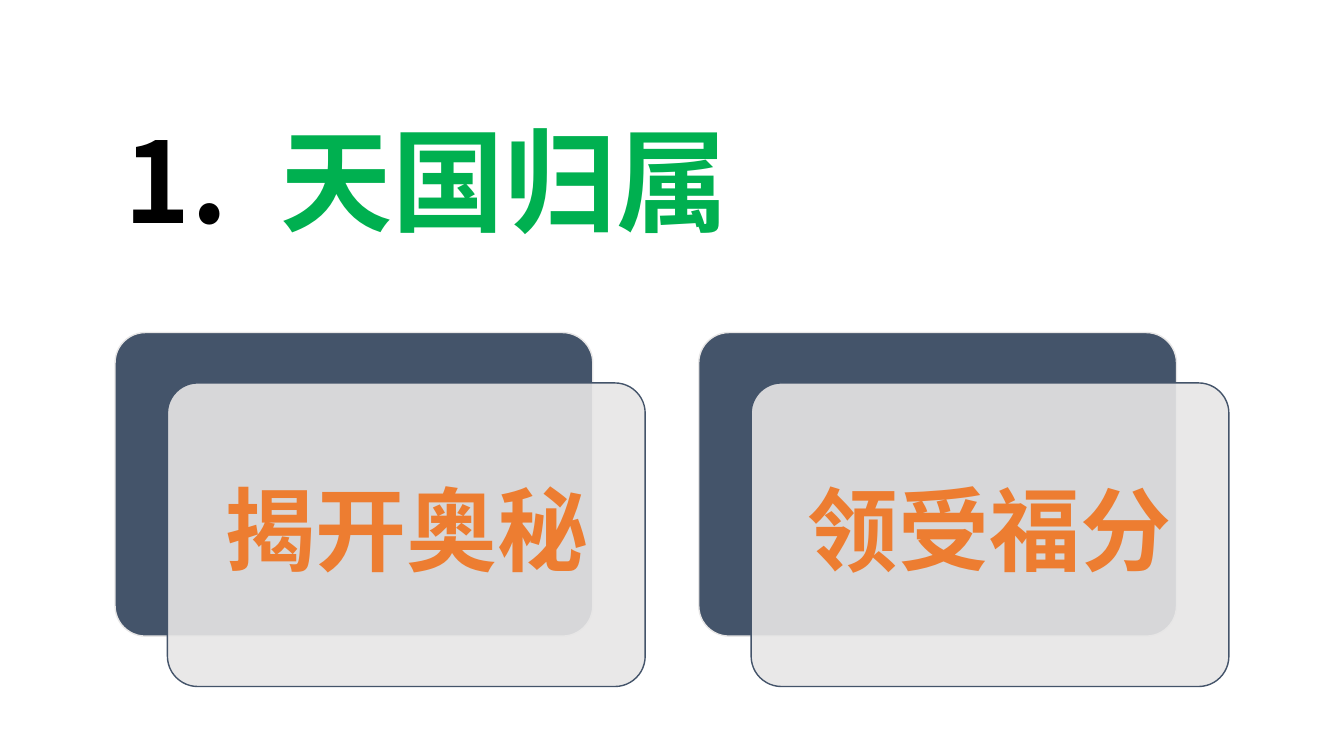
from pptx import Presentation
from pptx import util as u
from pptx.dml.color import RGBColor
from pptx.enum import shapes, text
from pptx.oxml import ns
from lxml import etree

HUES = {"ink": "000000", "green": "00B050", "navy": "44546A",
        "pale": "E7E6E6", "orange": "ED7D31"}
FONT = "Noto Sans CJK SC"
WIDE, HIGH = 12.04, 7.65
LEFT, TOP, STEP = 2.9, 8.38, 14.71
SHIFT_X, SHIFT_Y, RIM = 1.32, 1.27, 0.23
LABELS = ("揭开奥秘", "领受福分")


def hue(name):
    return RGBColor.from_string(HUES[name])


def add_text(slide, box, runs, size, align=text.PP_ALIGN.LEFT, pad=None, tab=None):
    """Add one bold line; runs holds (words, colour) pairs, lengths are in cm."""
    frame = slide.shapes.add_textbox(*map(u.Cm, box)).text_frame
    frame.word_wrap = True
    frame.vertical_anchor = text.MSO_ANCHOR.MIDDLE
    if pad is not None:
        frame.margin_left = frame.margin_right = u.Cm(pad)
        frame.margin_top = frame.margin_bottom = u.Cm(pad)
    para = frame.paragraphs[0]
    para.alignment = align
    para.line_spacing = 0.9
    if tab:
        stops = etree.SubElement(para._p.get_or_add_pPr(), ns.qn("a:tabLst"))
        etree.SubElement(stops, ns.qn("a:tab"), pos=str(u.Cm(tab)), algn="l")
    for words, tint in runs:
        run = para.add_run()
        run.text = words
        font = run.font
        font.size, font.bold, font.name = u.Pt(size), True, FONT
        font.color.rgb = hue(tint)
        etree.SubElement(run._r.get_or_add_rPr(), ns.qn("a:ea"), typeface=FONT)


def add_panel(slide, left, top, fill, line, alpha=None):
    """Add a rounded panel; alpha is its opacity in percent."""
    panel = slide.shapes.add_shape(shapes.MSO_SHAPE.ROUNDED_RECTANGLE,
                                   *map(u.Cm, (left, top, WIDE, HIGH)))
    panel.adjustments[0] = 0.1
    panel.shadow.inherit = False
    panel.fill.solid()
    panel.fill.fore_color.rgb = hue(fill)
    panel.line.color.rgb = hue(line)
    panel.line.width = u.Pt(1)
    if alpha:
        tint = panel.fill._xPr.find(".//" + ns.qn("a:srgbClr"))
        etree.SubElement(tint, ns.qn("a:alpha"), val=str(alpha * 1000))


def add_card(slide, left, label):
    add_panel(slide, left, TOP, "navy", "pale")
    x, y = left + SHIFT_X, TOP + SHIFT_Y
    add_panel(slide, x, y, "pale", "navy", alpha=90)
    add_text(slide, (x + RIM, y + RIM, WIDE - 2 * RIM, HIGH - 2 * RIM),
             [(label, "orange")], 65, align=text.PP_ALIGN.CENTER, pad=0.69)


def main():
    deck = Presentation()
    deck.slide_width, deck.slide_height = u.Cm(33.87), u.Cm(19.05)
    slide = deck.slides.add_slide(deck.slide_layouts[6])
    add_text(slide, (LEFT, 2.55, 28.27, 4.32),
             [("1.\t", "ink"), ("天国归属", "green")], 80, tab=3.92)
    for i, label in enumerate(LABELS):
        add_card(slide, LEFT + i * STEP, label)
    deck.save("out.pptx")


if __name__ == "__main__":
    main()
